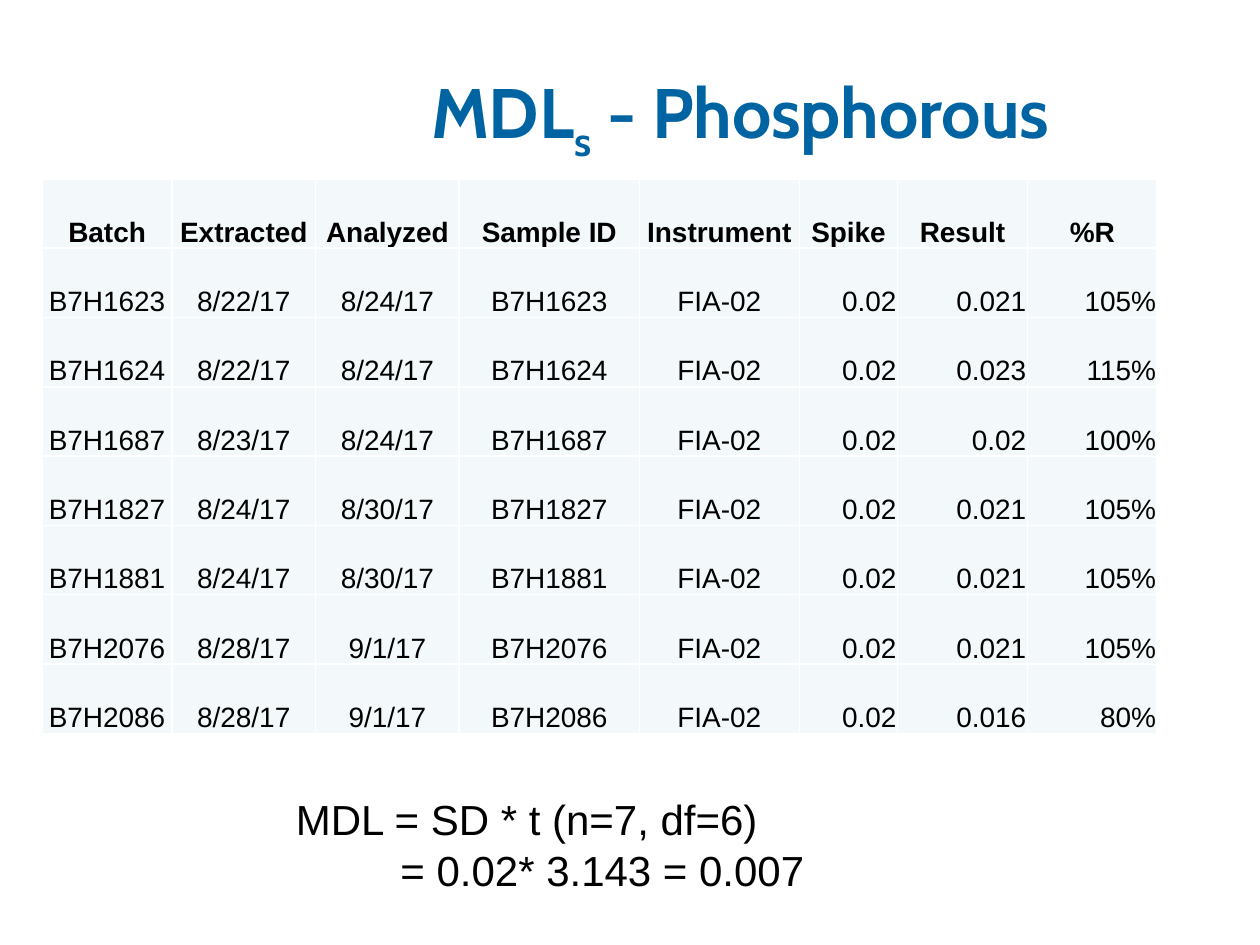
from lxml import etree
from pptx import Presentation
from pptx import util as u
from pptx.dml.color import RGBColor
from pptx.enum import text
from pptx.oxml.ns import qn

BLUE = RGBColor(0x00, 0x64, 0xA2)
BLACK = RGBColor(0x00, 0x00, 0x00)
PALE = RGBColor(0xF3, 0xF9, 0xFA)
WHITE = RGBColor(0xFF, 0xFF, 0xFF)

HEADERS = ["Batch", "Extracted", "Analyzed", "Sample ID",
           "Instrument", "Spike", "Result", "%R"]
COLUMN_WIDTHS = [1.03, 1.14, 1.14, 1.43, 1.27, 0.78, 1.03, 1.03]
ROW_HEIGHT = 0.55
SAMPLES = [
    ("B7H1623", "8/22/17", "8/24/17", "0.021", "105%"),
    ("B7H1624", "8/22/17", "8/24/17", "0.023", "115%"),
    ("B7H1687", "8/23/17", "8/24/17", "0.02", "100%"),
    ("B7H1827", "8/24/17", "8/30/17", "0.021", "105%"),
    ("B7H1881", "8/24/17", "8/30/17", "0.021", "105%"),
    ("B7H2076", "8/28/17", "9/1/17", "0.021", "105%"),
    ("B7H2086", "8/28/17", "9/1/17", "0.016", "80%"),
]
FIRST_NUMBER_COLUMN = HEADERS.index("Spike")


class SlideBuilder:
    grid = u.Inches(0.25)
    heading_font = "Cabin"
    body_font = "Arial"

    def __init__(self, presentation):
        self.slide = presentation.slides.add_slide(presentation.slide_layouts[5])

    def cells(self, *counts):
        return [round(count * self.grid) for count in counts]

    def add_run(self, paragraph, words, size, color=BLACK, bold=False, font=body_font):
        run = paragraph.add_run()
        run.text = words
        run.font.name = font
        run.font.size = u.Pt(size)
        run.font.bold = bold
        run.font.color.rgb = color
        return run

    def title(self, column, row, width, height, parts):
        shape = self.slide.shapes.title
        shape.left, shape.top, shape.width, shape.height = self.cells(
            column, row, width, height)
        shape.text_frame.vertical_anchor = text.MSO_ANCHOR.MIDDLE
        paragraph = shape.text_frame.paragraphs[0]
        paragraph.alignment = text.PP_ALIGN.CENTER
        for words, baseline in parts:
            run = self.add_run(paragraph, words, 40, BLUE, True, self.heading_font)
            if baseline:
                run.font._element.set("baseline", str(baseline * 1000))

    def border(self, cell):
        properties = cell._tc.get_or_add_tcPr()
        for index, side in enumerate(("a:lnL", "a:lnR", "a:lnT", "a:lnB")):
            line = etree.Element(qn(side), w=str(u.Pt(1)))
            fill = etree.SubElement(line, qn("a:solidFill"))
            etree.SubElement(fill, qn("a:srgbClr"), val=str(WHITE))
            properties.insert(index, line)

    def table(self, column, row, widths, row_height, records):
        left, top = self.cells(column, row)
        frame = self.slide.shapes.add_table(
            len(records), len(widths), left, top,
            u.Inches(sum(widths)), u.Inches(row_height * len(records)))
        table = frame.table
        table.horz_banding = False
        for table_column, width in zip(table.columns, widths):
            table_column.width = u.Inches(width)
        for row_index, record in enumerate(records):
            for column_index, words in enumerate(record):
                cell = table.cell(row_index, column_index)
                cell.fill.solid()
                cell.fill.fore_color.rgb = PALE
                self.border(cell)
                cell.vertical_anchor = text.MSO_ANCHOR.BOTTOM
                cell.margin_left = cell.margin_right = cell.margin_top = u.Inches(0.01)
                cell.margin_bottom = 0
                is_header = row_index == 0
                is_number = not is_header and column_index >= FIRST_NUMBER_COLUMN
                paragraph = cell.text_frame.paragraphs[0]
                paragraph.alignment = (
                    text.PP_ALIGN.RIGHT if is_number else text.PP_ALIGN.CENTER)
                self.add_run(paragraph, words, 16, bold=is_header)

    def formula(self, column, row, width, height, lines):
        shape = self.slide.shapes.add_textbox(*self.cells(column, row, width, height))
        frame = shape.text_frame
        frame.word_wrap = True
        frame.auto_size = text.MSO_AUTO_SIZE.SHAPE_TO_FIT_TEXT
        for index, (words, indent) in enumerate(lines):
            paragraph = frame.add_paragraph() if index else frame.paragraphs[0]
            if indent:
                paragraph._p.get_or_add_pPr().set("marL", str(u.Inches(indent)))
            self.add_run(paragraph, words, 24)


def main():
    presentation = Presentation()
    presentation.slide_width = u.Inches(10)
    presentation.slide_height = u.Inches(7.5)
    builder = SlideBuilder(presentation)
    builder.title(9, 1.2, 29, 5, [("MDL", 0), ("s", -25), (" - Phosphorous", 0)])
    records = [HEADERS] + [
        [batch, extracted, analyzed, batch, "FIA-02", "0.02", result, recovery]
        for batch, extracted, analyzed, result, recovery in SAMPLES]
    builder.table(1.34, 5.68, COLUMN_WIDTHS, ROW_HEIGHT, records)
    builder.formula(9, 25, 19.32, 3.64, [
        ("MDL = SD * t (n=7, df=6)", 0), ("= 0.02* 3.143 = 0.007", 0.83)])
    presentation.save("out.pptx")


if __name__ == "__main__":
    main()
